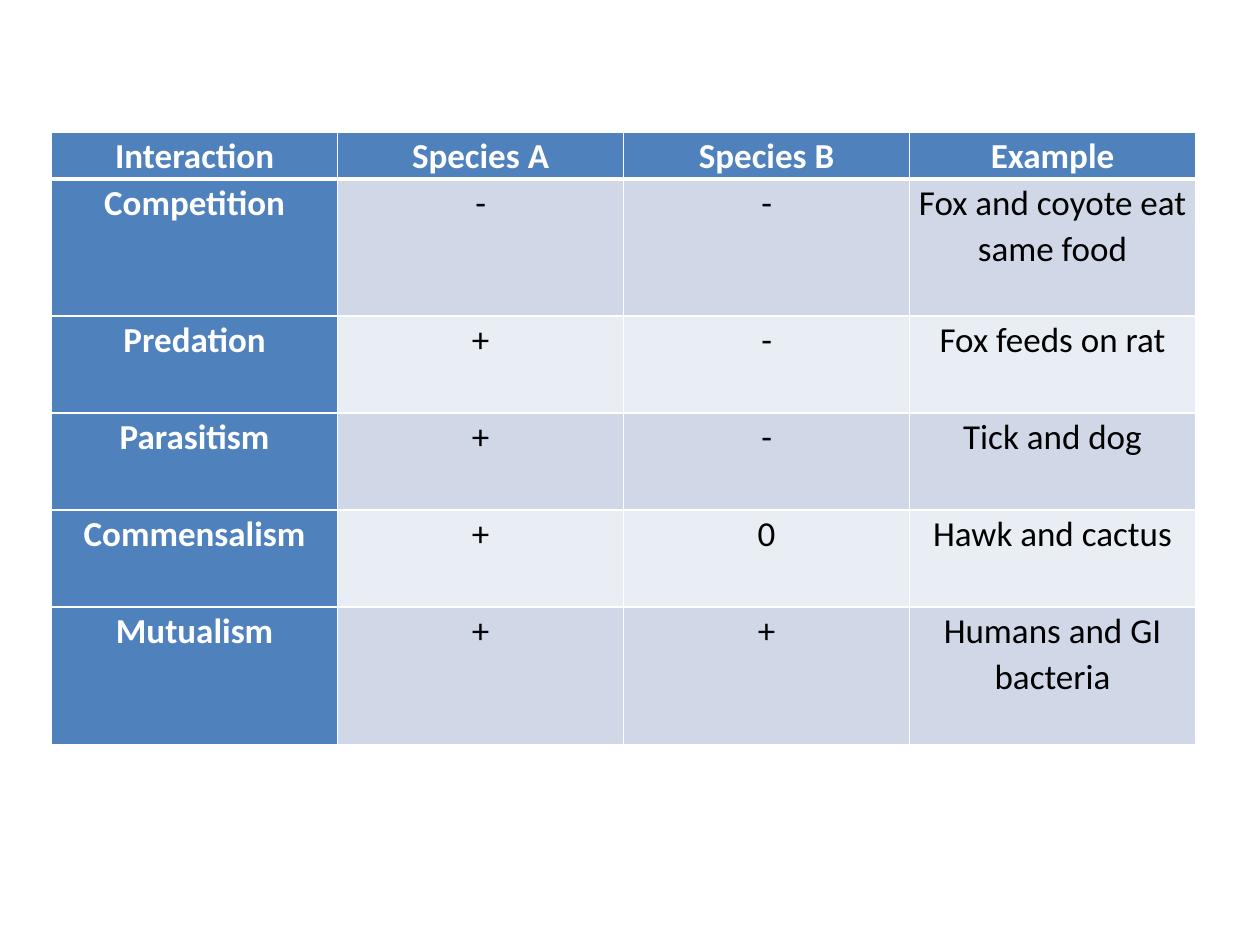
from dataclasses import dataclass

import pptx
import pptx.dml.color
import pptx.enum.text
import pptx.oxml.ns
import pptx.util
from lxml import etree
from pptx.util import Inches


@dataclass(frozen=True)
class Theme:
    font: str = "Calibri"
    size: int = 20
    line_spacing: float = 1.07
    header_fill: str = "4F81BD"
    header_text: str = "FFFFFF"
    body_text: str = "000000"
    bands: tuple = ("D0D8E8", "E9EDF4")
    border: str = "FFFFFF"
    thin: int = 1
    thick: int = 3


THEME = Theme()
INTERACTIONS = [
    ("Interaction", "Species A", "Species B", "Example"),
    ("Competition", "-", "-", "Fox and coyote eat same food"),
    ("Predation", "+", "-", "Fox feeds on rat"),
    ("Parasitism", "+", "-", "Tick and dog"),
    ("Commensalism", "+", "0", "Hawk and cactus"),
    ("Mutualism", "+", "+", "Humans and GI bacteria"),
]
ROW_HEIGHTS = [0.37, 1.09, 0.77, 0.77, 0.77, 1.09]


def rgb(value):
    return pptx.dml.color.RGBColor.from_string(value)


def write_text(frame, text, *, color, bold=False):
    paragraph = frame.paragraphs[0]
    paragraph.alignment = pptx.enum.text.PP_ALIGN.CENTER
    paragraph.line_spacing = THEME.line_spacing
    run = paragraph.add_run()
    run.text = text
    run.font.name = THEME.font
    run.font.size = pptx.util.Pt(THEME.size)
    run.font.bold = bold
    run.font.color.rgb = rgb(color)


def set_borders(cell, **widths):
    properties = cell._tc.get_or_add_tcPr()
    for side, width in widths.items():
        line = etree.SubElement(properties, pptx.oxml.ns.qn(f"a:ln{side}"),
                                w=str(pptx.util.Pt(width)))
        fill = etree.SubElement(line, pptx.oxml.ns.qn("a:solidFill"))
        etree.SubElement(fill, pptx.oxml.ns.qn("a:srgbClr"), val=THEME.border)


def format_cell(cell, text, row, column):
    heading = row == 0 or column == 0
    cell.margin_left = cell.margin_right = Inches(0.07)
    cell.margin_top = cell.margin_bottom = 0
    set_borders(cell, L=THEME.thin, R=THEME.thin,
                T=THEME.thick if row == 1 else THEME.thin,
                B=THEME.thick if row == 0 else THEME.thin)
    cell.fill.solid()
    cell.fill.fore_color.rgb = rgb(
        THEME.header_fill if heading else THEME.bands[(row - 1) % 2])
    write_text(cell.text_frame, text, bold=heading,
               color=THEME.header_text if heading else THEME.body_text)


def add_interaction_table(slide, left, top, width, height):
    table = slide.shapes.add_table(
        len(INTERACTIONS), len(INTERACTIONS[0]), left, top, width, height).table
    table.first_col = True
    for column in table.columns:
        column.width = width // len(table.columns)
    for row, (values, share) in enumerate(zip(INTERACTIONS, ROW_HEIGHTS)):
        table.rows[row].height = int(height * share / sum(ROW_HEIGHTS))
        for column, text in enumerate(values):
            format_cell(table.cell(row, column), text, row, column)


def main():
    presentation = pptx.Presentation()
    presentation.slide_width = Inches(10)
    presentation.slide_height = Inches(7.5)
    slide = presentation.slides.add_slide(presentation.slide_layouts[6])
    add_interaction_table(slide, Inches(0.41), Inches(1.05),
                          Inches(9.08), Inches(sum(ROW_HEIGHTS)))
    presentation.save("out.pptx")


if __name__ == "__main__":
    main()
